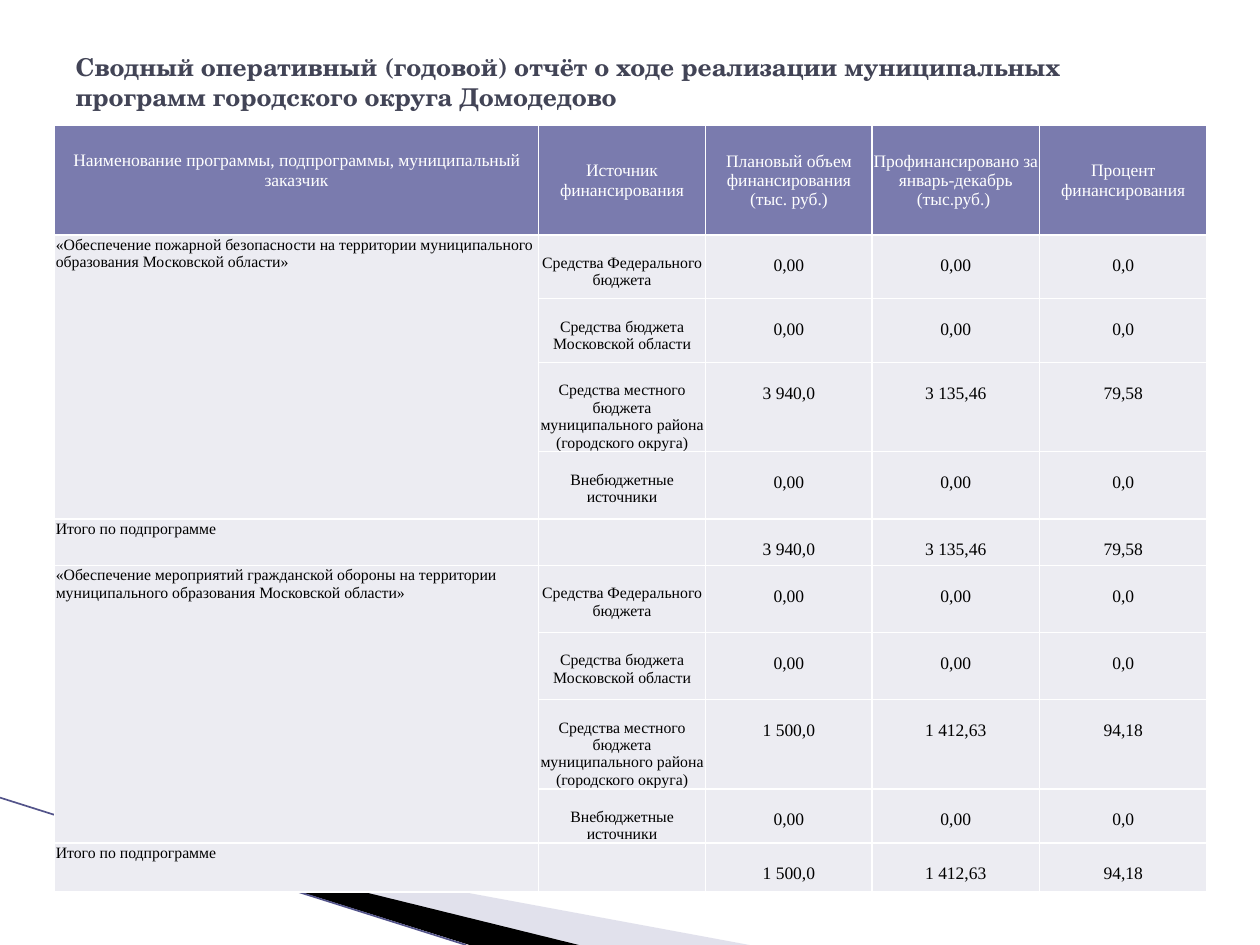
from collections import namedtuple
from dataclasses import dataclass

from lxml import etree
from pptx import Presentation
from pptx.dml.color import RGBColor
from pptx.enum.shapes import MSO_CONNECTOR
from pptx.enum.text import MSO_ANCHOR, PP_ALIGN
from pptx.oxml.ns import qn
from pptx.util import Pt

Box = namedtuple("Box", "x y w h")


@dataclass(frozen=True)
class Theme:
    title_font: str = "TeX Gyre Schola"
    table_font: str = "Times New Roman"
    title_size: float = 14
    value_size: float = 10
    label_size: float = 9
    title: str = "424456"
    header: str = "7A7BAE"
    header_text: str = "FFFFFF"
    body: str = "ECECF2"
    text: str = "000000"
    border: str = "FFFFFF"
    wedge: str = "000000"
    pale: str = "B6B6D1"
    stripe: str = "53548A"


THEME = Theme()
COL_WIDTHS = (276.4, 95.7, 95, 95.7, 95.7)
ROW_HEIGHTS = (62.6, 36.5, 36.5, 50.5, 38.4, 26.6, 38.4, 38.4, 50.5, 30.6, 28)
HEADERS = (
    "Наименование программы, подпрограммы, муниципальный заказчик",
    "Источник финансирования",
    "Плановый объем финансирования (тыс. руб.)",
    "Профинансировано за январь-декабрь (тыс.руб.) ",
    "Процент финансирования",
)
SOURCES = (
    "Средства Федерального бюджета",
    "Средства бюджета Московской области",
    "Средства местного бюджета муниципального района (городского округа)",
    "Внебюджетные источники",
)
LOCAL_SOURCE = 2
NO_FUNDS = ("0,00", "0,00", "0,0")
# Each subprogramme is financed from the local budget alone
PROGRAMMES = (
    ("«Обеспечение пожарной безопасности на территории муниципального "
     "образования Московской области»", ("3 940,0", "3 135,46", "79,58")),
    ("«Обеспечение мероприятий гражданской обороны на территории "
     "муниципального образования Московской области»",
     ("1 500,0", "1 412,63", "94,18")),
)


def add_run(p, text, font, size, color, bold=False):
    r = p.add_run()
    r.text = text
    r.font.name = font
    r.font.size = Pt(size)
    r.font.bold = bold
    r.font.color.rgb = RGBColor.from_string(color)


def add_wedge(s, box, points, color, alpha=None):
    """Filled polygon; points are fractions of the box."""
    pts = [(Pt(box.x + fx * box.w), Pt(box.y + fy * box.h)) for fx, fy in points]
    builder = s.shapes.build_freeform(*pts[0])
    builder.add_line_segments(pts[1:], close=True)
    sp = builder.convert_to_shape()
    sp.shadow.inherit = False
    sp.fill.solid()
    sp.fill.fore_color.rgb = RGBColor.from_string(color)
    sp.line.fill.background()
    if alpha is not None:
        clr = sp.fill._xPr.find(".//" + qn("a:srgbClr"))
        etree.SubElement(clr, qn("a:alpha"), val=str(alpha * 1000))


def add_stripe(s, box):
    line = s.shapes.add_connector(
        MSO_CONNECTOR.STRAIGHT,
        Pt(box.x), Pt(box.y), Pt(box.x + box.w), Pt(box.y + box.h))
    line.line.color.rgb = RGBColor.from_string(THEME.stripe)
    line.line.width = Pt(0.95)
    etree.SubElement(line._element.spPr, qn("a:effectLst"))


def add_decoration(s, box):
    """Diagonal wedges and stripe along the bottom edge."""
    wedges = Box(box.x + 38.2, box.y + 12, 390.2, box.h - 12)
    add_wedge(s, wedges, ((0, 0), (1, 1), (0.74, 1)), THEME.pale, alpha=40)
    add_wedge(s, wedges, ((0, 0), (0.75, 1), (0.59, 1)), THEME.wedge)
    add_stripe(s, Box(box.x, box.y, 266.4, box.h))


def add_title(s, box):
    sp = s.shapes.title
    sp.left, sp.top, sp.width, sp.height = map(Pt, box)
    tf = sp.text_frame
    tf.word_wrap = True
    tf.vertical_anchor = MSO_ANCHOR.MIDDLE
    p = tf.paragraphs[0]
    p.alignment = PP_ALIGN.LEFT
    add_run(p, "Сводный оперативный (годовой) отчёт о ходе реализации муниципальных "
            "программ городского округа Домодедово",
            THEME.title_font, THEME.title_size, THEME.title, bold=True)


def style_cell(cell, fill):
    cell.margin_left = cell.margin_right = cell.margin_top = Pt(0.7)
    cell.margin_bottom = 0
    tc_pr = cell._tc.get_or_add_tcPr()
    for side in ("lnL", "lnR", "lnT", "lnB"):
        ln = etree.SubElement(tc_pr, qn("a:" + side), w=str(Pt(1)))
        solid = etree.SubElement(ln, qn("a:solidFill"))
        etree.SubElement(solid, qn("a:srgbClr"), val=THEME.border)
    cell.fill.solid()
    cell.fill.fore_color.rgb = RGBColor.from_string(fill)


def write_cell(cell, text, size, color=THEME.text, align=PP_ALIGN.CENTER, top=0.7):
    cell.margin_top = Pt(top)
    p = cell.text_frame.paragraphs[0]
    p.alignment = align
    add_run(p, text, THEME.table_font, size, color)


def write_header(table):
    for col, text in enumerate(HEADERS):
        cell = table.cell(0, col)
        cell.vertical_anchor = MSO_ANCHOR.MIDDLE
        write_cell(cell, text, THEME.value_size, THEME.header_text)
    table.cell(0, 0).margin_bottom = Pt(11.5)


def write_values(table, row, values):
    for col, value in enumerate(values, start=2):
        write_cell(table.cell(row, col), value, THEME.value_size, top=12.2)


def write_programme(table, top, name, local_funds):
    """Four source rows beside a merged name, then the total row."""
    total = top + len(SOURCES)
    table.cell(top, 0).merge(table.cell(total - 1, 0))
    for row, text in ((top, name), (total, "Итого по подпрограмме")):
        write_cell(table.cell(row, 0), text, THEME.label_size, align=PP_ALIGN.LEFT)
    for i, source in enumerate(SOURCES):
        write_cell(table.cell(top + i, 1), source, THEME.label_size, top=11)
        write_values(table, top + i, local_funds if i == LOCAL_SOURCE else NO_FUNDS)
    write_values(table, total, local_funds)


def add_report_table(s, box):
    table = s.shapes.add_table(
        len(ROW_HEIGHTS), len(COL_WIDTHS), *map(Pt, box)).table
    table.horz_banding = False
    for column, width in zip(table.columns, COL_WIDTHS):
        column.width = Pt(width)
    for i, (row, height) in enumerate(zip(table.rows, ROW_HEIGHTS)):
        row.height = Pt(height)
        for cell in row.cells:
            style_cell(cell, THEME.body if i else THEME.header)
    write_header(table)
    for i, (name, funds) in enumerate(PROGRAMMES):
        write_programme(table, 1 + i * (len(SOURCES) + 1), name, funds)


def main():
    prs = Presentation()
    prs.slide_width, prs.slide_height = Pt(720), Pt(540)
    s = prs.slides.add_slide(prs.slide_layouts[5])
    add_decoration(s, Box(0, 455.8, 720, 84.2))
    add_title(s, Box(36, 21.6, 648, 50))
    add_report_table(s, Box(31.2, 71.6, sum(COL_WIDTHS), sum(ROW_HEIGHTS)))
    prs.save("out.pptx")


if __name__ == "__main__":
    main()
